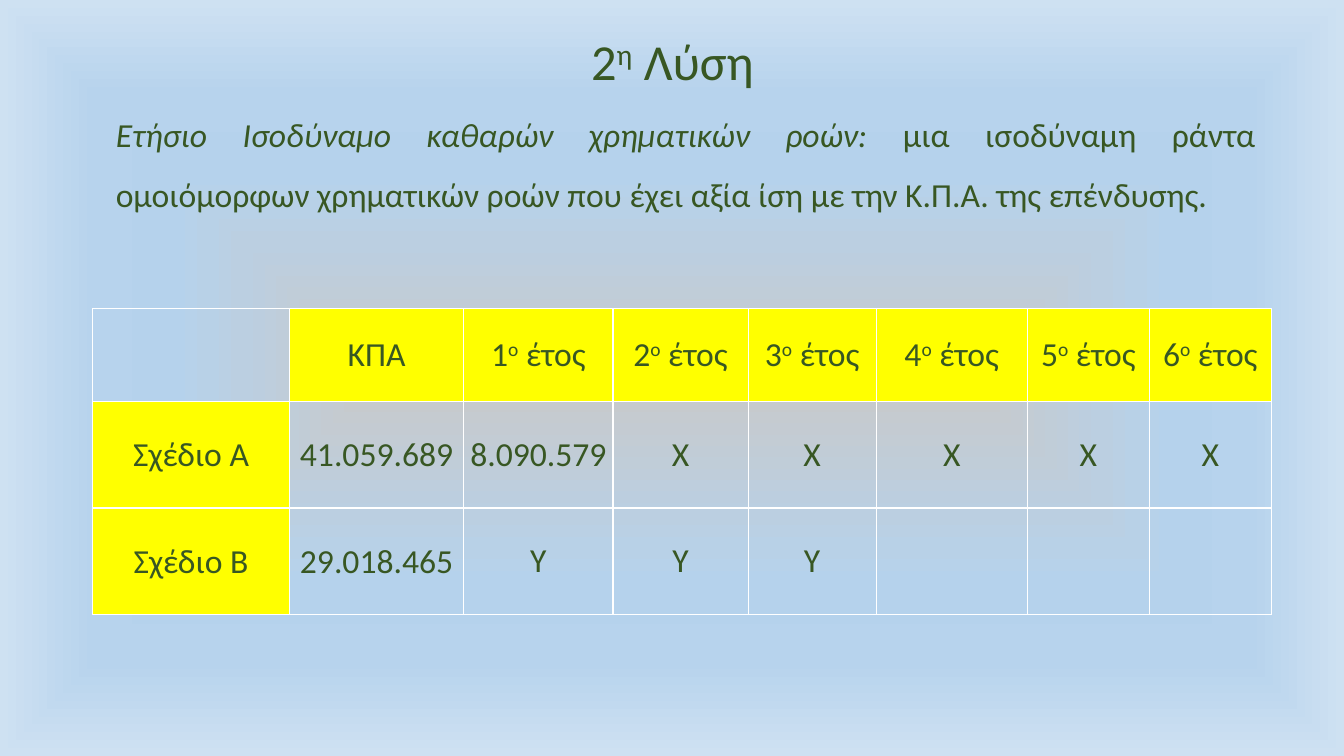
from dataclasses import dataclass

from lxml.etree import SubElement
from pptx import Presentation
from pptx.dml.color import RGBColor
from pptx.enum.text import MSO_ANCHOR, PP_ALIGN
from pptx.oxml import parse_xml
from pptx.oxml.ns import nsdecls, qn
from pptx.util import Inches, Pt


@dataclass(frozen=True)
class Theme:
    """Colours, font and type sizes of the slide."""
    font: str = "Calibri"
    ink: str = "385723"
    mark: str = "FFFF00"
    rule: str = "FFFFFF"
    head: int = 36
    text: int = 24
    glow: tuple = ((0, "C9C9C9"), (36, "BBCFE1"), (45, "B8D1E7"), (54, "B5D2EC"),
                   (61, "B5D2EC"), (65, "B5D2EC"), (75, "B7D3ED"), (100, "CEE1F2"))


THEME = Theme()
WIDTHS = (1.95, 1.73, 1.48, 1.34, 1.27, 1.5, 1.21, 1.21)
HEIGHTS = (0.92, 1.06, 1.06)
YEARS = 6
ROWS = (
    ["", "ΚΠΑ"] + [f"{year}^ο^ έτος" for year in range(1, YEARS + 1)],
    ["Σχέδιο Α", "41.059.689", "8.090.579"] + ["Χ"] * 5,
    ["Σχέδιο Β", "29.018.465"] + ["Υ"] * 3 + [""] * 3,
)


def write(para, text, size, align=PP_ALIGN.CENTER):
    """Write text into a paragraph, raising what stands between carets."""
    para.alignment = align
    for order, part in enumerate(text.split("^")):
        run = para.add_run()
        run.text = part
        run.font.name = THEME.font
        run.font.size = Pt(size)
        run.font.color.rgb = RGBColor.from_string(THEME.ink)
        if order % 2:
            run.font._element.set("baseline", "30000")


def paint(slide):
    """Give the slide its rectangular glow."""
    stops = "".join(f'<a:gs pos="{pos * 1000}"><a:srgbClr val="{tone}"/></a:gs>'
                    for pos, tone in THEME.glow)
    glow = parse_xml(
        f'<p:bg {nsdecls("p", "a")}><p:bgPr><a:gradFill rotWithShape="1">'
        f'<a:gsLst>{stops}</a:gsLst><a:path path="shape">'
        '<a:fillToRect l="50000" t="50000" r="50000" b="50000"/></a:path>'
        '</a:gradFill><a:effectLst/></p:bgPr></p:bg>')
    slide.element.find(qn("p:cSld")).insert(0, glow)


def place(shape, box):
    """Move a shape to its box."""
    shape.left, shape.top, shape.width, shape.height = map(Inches, box)


def title(slide, box):
    """Fill the title placeholder."""
    shape = slide.shapes.title
    place(shape, box)
    frame = shape.text_frame
    frame.vertical_anchor = MSO_ANCHOR.MIDDLE
    para = frame.paragraphs[0]
    para.line_spacing = 0.9
    write(para, "2^η^ Λύση", THEME.head)


def define(slide, box):
    """Place the definition, its term in italics."""
    frame = slide.shapes.add_textbox(*map(Inches, box)).text_frame
    frame.word_wrap = True
    para = frame.paragraphs[0]
    para.line_spacing = 1.5
    para.space_before = Pt(10)
    for text in ("Ετήσιο Ισοδύναμο καθαρών χρηματικών ροών: ",
                 "μια ισοδύναμη ράντα ομοιόμορφων χρηματικών ροών "
                 "που έχει αξία ίση με την Κ.Π.Α. της επένδυσης."):
        write(para, text, THEME.text, PP_ALIGN.JUSTIFY)
    para.runs[0].font.italic = True


def edge(cell):
    """Draw thin lines on all four sides of a cell."""
    props = cell._tc.get_or_add_tcPr()
    for order, side in enumerate(("lnL", "lnR", "lnT", "lnB")):
        line = SubElement(props, qn(f"a:{side}"), w=str(Pt(1)))
        fill = SubElement(line, qn("a:solidFill"))
        SubElement(fill, qn("a:srgbClr"), val=THEME.rule)
        props.insert(order, line)


def style(cell, text, label):
    """Fill one table cell and set its text."""
    if label:
        cell.fill.solid()
        cell.fill.fore_color.rgb = RGBColor.from_string(THEME.mark)
    else:
        cell.fill.background()
    edge(cell)
    if not text:
        return
    cell.vertical_anchor = MSO_ANCHOR.MIDDLE
    cell.margin_left = cell.margin_right = cell.margin_top = Inches(0.01)
    cell.margin_bottom = 0
    para = cell.text_frame.paragraphs[0]
    write(para, text, THEME.text)
    if text in ("Χ", "Υ"):
        para.line_spacing = 0.9
        para.space_before = Pt(10)


def grid(slide, box):
    """Build the table of plans and yearly flows."""
    table = slide.shapes.add_table(len(ROWS), len(WIDTHS), *map(Inches, box)).table
    table.first_row = table.horz_banding = False
    for col, width in zip(table.columns, WIDTHS):
        col.width = Inches(width)
    for row, height in zip(table.rows, HEIGHTS):
        row.height = Inches(height)
    for y, row in enumerate(ROWS):
        for x, text in enumerate(row):
            style(table.cell(y, x), text, (x == 0) != (y == 0))


def main():
    """Build and save the slide."""
    deck = Presentation()
    deck.slide_width, deck.slide_height = Inches(13.33), Inches(7.5)
    slide = deck.slides.add_slide(deck.slide_layouts.get_by_name("Title Only"))
    paint(slide)
    title(slide, (0.92, 0, 11.5, 1.27))
    define(slide, (1.05, 0.88, 11.5, 1.99))
    grid(slide, (0.92, 3.06, sum(WIDTHS), sum(HEIGHTS)))
    deck.save("out.pptx")


if __name__ == "__main__":
    main()
